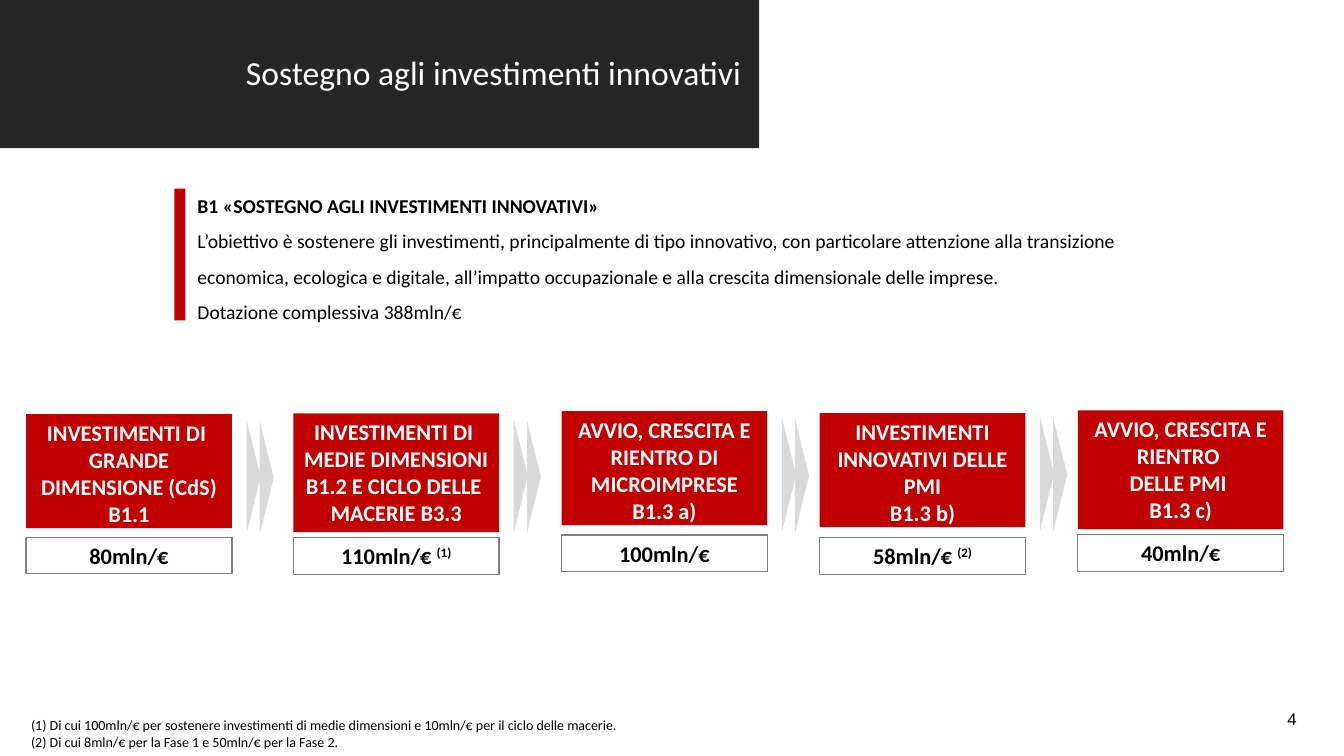
from pptx import Presentation
from pptx.dml.color import RGBColor
from pptx.enum.shapes import MSO_SHAPE as Shape
from pptx.enum.text import MSO_ANCHOR as Anchor, PP_ALIGN as Align
from pptx.util import Inches, Pt

RED, DARK, GREY, LINE = "C00000", "262626", "D9D9D9", "808080"
BLACK, WHITE = "000000", "FFFFFF"
CARD_WIDTH = 2.04

MEASURES = [
    (0.26, 4.11, 1.13, ["INVESTIMENTI DI ", "GRANDE DIMENSIONE (CdS) B1.1"],
     5.33, 0.36, "80mln/€", ""),
    (2.91, 4.10, 1.18, ["INVESTIMENTI DI ", "MEDIE DIMENSIONI B1.2 E CICLO DELLE ", "MACERIE B3.3"],
     5.33, 0.37, "110mln/€ ", "(1)"),
    (5.57, 4.08, 1.13, ["AVVIO, CRESCITA E RIENTRO DI MICROIMPRESE", "B1.3 a)"],
     5.31, 0.36, "100mln/€", ""),
    (8.13, 4.10, 1.13, ["INVESTIMENTI INNOVATIVI DELLE PMI", "B1.3 b)"],
     5.33, 0.37, "58mln/€ ", "(2)"),
    (10.69, 4.07, 1.18, ["AVVIO, CRESCITA E RIENTRO ", "DELLE PMI ", "B1.3 c)"],
     5.30, 0.37, "40mln/€", ""),
]


def rgb(code):
    """Turn a hex string into a colour."""
    return RGBColor.from_string(code)


def write(shape, lines, size, color, bold=False, align=Align.LEFT, font="Calibri", spacing=None):
    """Fill a shape with one paragraph per line and return its paragraphs."""
    frame = shape.text_frame
    frame.word_wrap = True
    frame.vertical_anchor = Anchor.TOP
    frame.text = "\n".join(lines)
    for paragraph in frame.paragraphs:
        paragraph.alignment = align
        paragraph.line_spacing = spacing
        paragraph.font.name = font
        paragraph.font.size = Pt(size)
        paragraph.font.bold = bold
        paragraph.font.color.rgb = rgb(color)
    return frame.paragraphs


def add_text(slide, box, lines, size, color, **style):
    """Add a text box and return its paragraphs."""
    return write(slide.shapes.add_textbox(*map(Inches, box)), lines, size, color, **style)


def add_block(slide, box, fill=None, line=None, kind=Shape.RECTANGLE):
    """Add a flat preset shape with optional fill and outline."""
    block = slide.shapes.add_shape(kind, *map(Inches, box))
    block.shadow.inherit = False
    if fill:
        block.fill.solid()
        block.fill.fore_color.rgb = rgb(fill)
    else:
        block.fill.background()
    if line:
        block.line.color.rgb = rgb(line)
        block.line.width = Pt(1)
    else:
        block.line.fill.background()
    return block


def add_measure(slide, left, top, height, title, amount_top, amount_height, amount, note):
    """Add a red measure card with its amount below."""
    card = add_block(slide, (left, top, CARD_WIDTH, height), fill=RED)
    write(card, title, 16, WHITE, bold=True, align=Align.CENTER)
    budget = add_block(slide, (left, amount_top, CARD_WIDTH, amount_height), line=LINE)
    paragraph = write(budget, [amount], 16, BLACK, bold=True, align=Align.CENTER)[0]
    if note:
        reference = paragraph.add_run()
        reference.text = note
        reference.font._element.set("baseline", "30000")


def add_chevron(slide, left, top):
    """Add a pair of triangles pointing right."""
    for step in range(2):
        box = (left + 0.13 * step, top + 0.01 * step, 1.13, 0.14)
        add_block(slide, box, fill=GREY, kind=Shape.ISOSCELES_TRIANGLE).rotation = 90


def main():
    """Build the slide and save it."""
    deck = Presentation()
    deck.slide_width, deck.slide_height = Inches(13.33), Inches(7.5)
    slide = deck.slides.add_slide(deck.slide_layouts[6])

    add_block(slide, (0, 0, 7.53, 1.47), fill=DARK)
    add_text(slide, (11.63, 6.98, 1.33, 0.52), ["4"], 12, BLACK, align=Align.RIGHT, font="Arial")
    add_text(slide, (2.34, 0.47, 5.35, 0.48), ["Sostegno agli investimenti innovativi"], 24, WHITE)
    objective = add_text(slide, (1.86, 1.76, 9.48, 1.48), [
        "B1 «SOSTEGNO AGLI INVESTIMENTI INNOVATIVI»",
        "L’obiettivo è sostenere gli investimenti, principalmente di tipo innovativo, con particolare "
        "attenzione alla transizione economica, ecologica e digitale, all’impatto occupazionale e alla "
        "crescita dimensionale delle imprese.",
        "Dotazione complessiva 388mln/€",
    ], 14, BLACK, spacing=1.5)
    objective[0].font.bold = True
    add_block(slide, (1.73, 1.87, 0.11, 1.31), fill=RED)
    add_text(slide, (0.21, 7.06, 12.34, 0.44), [
        "(1) Di cui 100mln/€ per sostenere investimenti di medie dimensioni e 10mln/€ per il ciclo delle macerie.",
        "(2) Di cui 8mln/€ per la Fase 1 e 50mln/€ per la Fase 2.",
    ], 10, BLACK)

    for index, measure in enumerate(MEASURES):
        add_measure(slide, *measure)
        if index < len(MEASURES) - 1:
            add_chevron(slide, measure[0] + 1.69, 4.66 - 0.01 * index)

    deck.save("out.pptx")


if __name__ == "__main__":
    main()
